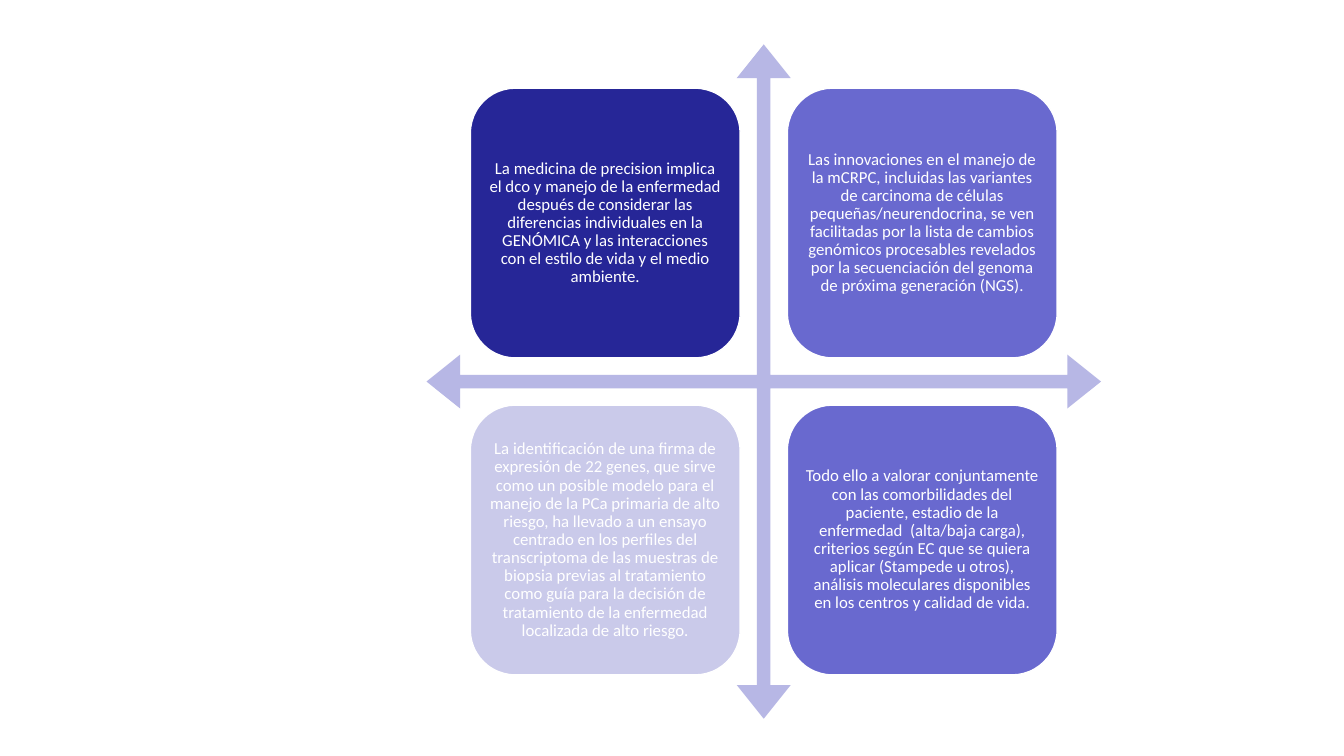
from dataclasses import dataclass

from pptx import Presentation
from pptx.dml.color import RGBColor
from pptx.enum.shapes import MSO_SHAPE
from pptx.enum.text import MSO_ANCHOR, PP_ALIGN
from pptx.util import Inches, Pt


@dataclass(frozen=True)
class Theme:
    """Colours, type and proportions of the matrix."""
    axes: str = "B7B7E5"
    navy: str = "262697"
    violet: str = "6969CF"
    lavender: str = "CACAEA"
    white: str = "FFFFFF"
    font: str = "Calibri"
    body: int = 12
    tile_share: float = 0.4
    margin_share: float = 0.065
    pitch_share: float = 0.47


THEME = Theme()
SLIDE_WIDTH, SLIDE_HEIGHT = 13.33, 7.5
MATRIX_LEFT, MATRIX_TOP, MATRIX_SIDE = 4.23, 0.44, 6.69

QUADRANTS = (
    (THEME.navy,
     "La medicina de precision implica el dco y manejo de la enfermedad después de "
     "considerar las diferencias individuales en la GENÓMICA y las interacciones con "
     "el estilo de vida y el medio ambiente."),
    (THEME.violet,
     "Las innovaciones en el manejo de la mCRPC, incluidas las variantes de carcinoma "
     "de células pequeñas/neurendocrina, se ven facilitadas por la lista de cambios "
     "genómicos procesables revelados por la secuenciación del genoma de próxima "
     "generación (NGS)."),
    (THEME.lavender,
     "La identificación de una firma de expresión de 22 genes, que sirve como un "
     "posible modelo para el manejo de la PCa primaria de alto riesgo, ha llevado a un "
     "ensayo centrado en los perfiles del transcriptoma de las muestras de biopsia "
     "previas al tratamiento como guía para la decisión de tratamiento de la enfermedad "
     "localizada de alto riesgo."),
    (THEME.violet,
     "Todo ello a valorar conjuntamente con las comorbilidades del paciente, estadio de "
     "la enfermedad  (alta/baja carga), criterios según EC que se quiera aplicar "
     "(Stampede u otros), análisis moleculares disponibles en los centros y calidad de "
     "vida."),
)


def apply_format(target, values):
    """Set each named attribute on the target."""
    for name, value in values.items():
        setattr(target, name, value)


def add_filled(slide, preset, left, top, side, colour):
    """Add a square preset shape with a solid fill and no shadow."""
    filled = slide.shapes.add_shape(
        preset, Inches(left), Inches(top), Inches(side), Inches(side))
    filled.shadow.inherit = False
    filled.fill.solid()
    filled.fill.fore_color.rgb = RGBColor.from_string(colour)
    return filled


def add_axes(slide):
    """Add the four-way arrow that divides the matrix."""
    axes = add_filled(slide, MSO_SHAPE.QUAD_ARROW, MATRIX_LEFT, MATRIX_TOP,
                      MATRIX_SIDE, THEME.axes)
    axes.line.fill.background()
    for index, share in enumerate((0.02, 0.04, 0.05)):
        axes.adjustments[index] = share


def add_quadrant(slide, column, row, colour, statement):
    """Add one rounded tile with its statement at a matrix cell."""
    left, top = (
        start + MATRIX_SIDE * (THEME.margin_share + step * THEME.pitch_share)
        for start, step in ((MATRIX_LEFT, column), (MATRIX_TOP, row)))
    tile = add_filled(slide, MSO_SHAPE.ROUNDED_RECTANGLE, left, top,
                      MATRIX_SIDE * THEME.tile_share, colour)
    white = RGBColor.from_string(THEME.white)
    tile.line.color.rgb = white
    tile.line.width = Pt(1)
    frame = tile.text_frame
    inset = Inches(0.05)
    apply_format(frame, {
        "word_wrap": True, "vertical_anchor": MSO_ANCHOR.MIDDLE,
        "margin_left": inset, "margin_right": inset,
        "margin_top": inset, "margin_bottom": inset})
    paragraph = frame.paragraphs[0]
    apply_format(paragraph, {"alignment": PP_ALIGN.CENTER, "line_spacing": 0.9})
    run = paragraph.add_run()
    run.text = statement
    apply_format(run.font, {"name": THEME.font, "size": Pt(THEME.body)})
    run.font.color.rgb = white


def main():
    """Build the slide and save it."""
    deck = Presentation()
    apply_format(deck, {"slide_width": Inches(SLIDE_WIDTH),
                        "slide_height": Inches(SLIDE_HEIGHT)})
    slide = deck.slides.add_slide(deck.slide_layouts.get_by_name("Blank"))
    add_axes(slide)
    for index, (colour, statement) in enumerate(QUADRANTS):
        row, column = divmod(index, 2)
        add_quadrant(slide, column, row, colour, statement)
    deck.save("out.pptx")


if __name__ == "__main__":
    main()
